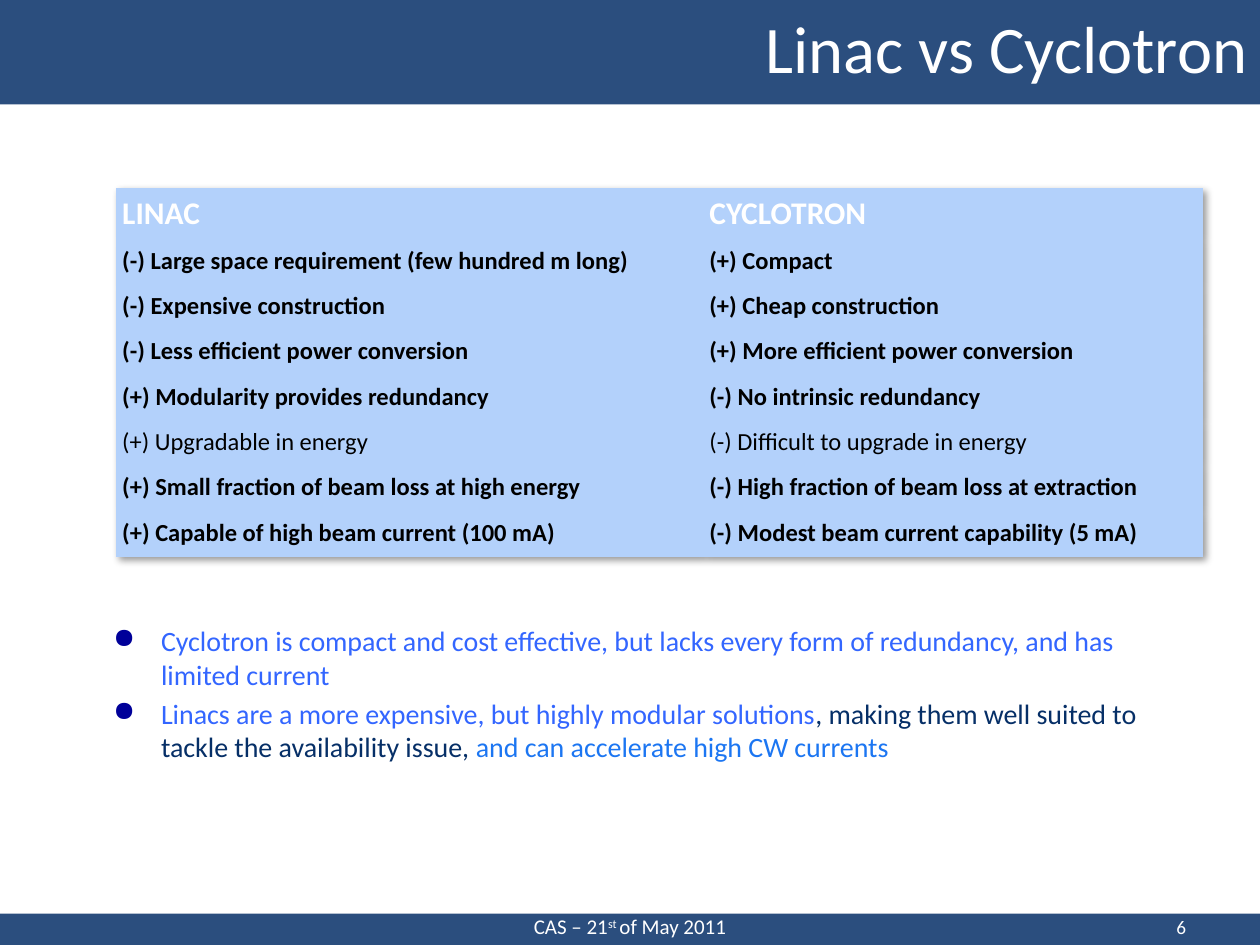
from pptx import Presentation
from pptx.util import Inches, Pt
from pptx.dml.color import RGBColor
from pptx.enum.shapes import MSO_SHAPE as Shape
from pptx.enum.text import PP_ALIGN as Align, MSO_ANCHOR as Anchor
from pptx.oxml import parse_xml
from pptx.oxml.ns import nsdecls


def color(code):
    return RGBColor.from_string(code)


def add_run(para, text, size, code, bold=False):
    run = para.add_run()
    run.text = text
    font = run.font
    font.name = "Calibri"
    font.size = Pt(size)
    font.bold = bold
    font.color.rgb = color(code)
    return run


prs = Presentation()
prs.slide_width, prs.slide_height = Inches(10), Inches(7.5)
slide = prs.slides.add_slide(prs.slide_layouts[6])

for top, height in [(0, 0.83), (7.25, 0.25)]:
    band = slide.shapes.add_shape(
        Shape.RECTANGLE, 0, Inches(top), Inches(10), Inches(height))
    band.shadow.inherit = False
    band.fill.solid()
    band.fill.fore_color.rgb = color("2B4E7E")
    band.line.fill.background()

labels = [
    (2, 7.26, 6, 0.24, Anchor.BOTTOM, Align.CENTER, 12,
     ["CAS – 21", "st ", "of May 2011"]),
    (0.83, 0, 9.17, 0.83, Anchor.MIDDLE, Align.RIGHT, 38, ["Linac vs Cyclotron"]),
    (8.75, 7.25, 1.25, 0.25, Anchor.BOTTOM, Align.CENTER, 11, ["6"]),
]
for left, top, width, height, anchor, align, size, parts in labels:
    box = slide.shapes.add_textbox(
        Inches(left), Inches(top), Inches(width), Inches(height))
    frame = box.text_frame
    frame.word_wrap = True
    frame.vertical_anchor = anchor
    para = frame.paragraphs[0]
    para.alignment = align
    if size == 38:
        para.line_spacing = 0.9
    for part in parts:
        run = add_run(para, part, size, "FFFFFF")
        if part == "st ":
            run.font._element.set("baseline", "30000")

points = [
    [("Cyclotron is compact and cost effective, but lacks every form of "
      "redundancy, and has limited current", "3366FF")],
    [("Linacs are a more expensive, but highly modular solutions", "3366FF"),
     (", making them well suited to tackle the availability issue, ", "062F67"),
     ("and can accelerate high CW currents", "1C76F2")],
]
box = slide.shapes.add_textbox(Inches(0.3), Inches(4.9), Inches(9), Inches(1.9))
frame = box.text_frame
frame.word_wrap = True
for i, point in enumerate(points):
    para = frame.add_paragraph() if i else frame.paragraphs[0]
    props = para._p.get_or_add_pPr()
    props.set("marL", str(Inches(0.88)))
    props.set("indent", str(Inches(-0.38)))
    props.append(parse_xml(
        f'<a:buClr {nsdecls("a")}><a:srgbClr val="000099"/></a:buClr>'))
    props.append(parse_xml(f'<a:buChar {nsdecls("a")} char="●"/>'))
    if i:
        para.space_before = Pt(3.2)
    for text, code in point:
        add_run(para, text, 16, code)

rows = [
    (0.4, "LINAC", "CYCLOTRON"),
    (0.37, "(-) Large space requirement (few hundred m long)", "(+) Compact"),
    (0.34, "(-) Expensive construction", "(+) Cheap construction"),
    (0.37, "(-) Less efficient power conversion", "(+) More efficient power conversion"),
    (0.37, "(+) Modularity provides redundancy", "(-) No intrinsic redundancy"),
    (0.34, "(+) Upgradable in energy", "(-) Difficult to upgrade in energy"),
    (0.37, "(+) Small fraction of beam loss at high energy",
     "(-) High fraction of beam loss at extraction"),
    (0.37, "(+) Capable of high beam current (100 mA)",
     "(-) Modest beam current capability (5 mA)"),
]
table = slide.shapes.add_table(
    len(rows), 2, Inches(0.92), Inches(1.49), Inches(8.63), Inches(2.93)).table
table.horz_banding = False
table._tbl.tblPr.insert(0, parse_xml(
    f'<a:effectLst {nsdecls("a")}><a:outerShdw blurRad="50800" dist="38100" '
    'dir="2700000" algn="tl" rotWithShape="0"><a:srgbClr val="000000">'
    '<a:alpha val="40000"/></a:srgbClr></a:outerShdw></a:effectLst>'))
table._tbl.tblPr.find(
    "{http://schemas.openxmlformats.org/drawingml/2006/main}tableStyleId"
).text = "{2D5ABB26-0587-4C30-8999-92F81FD0307C}"
for col, width in zip(table.columns, [4.66, 3.97]):
    col.width = Inches(width)
for i, (height, *texts) in enumerate(rows):
    table.rows[i].height = Inches(height)
    for j, text in enumerate(texts):
        cell = table.cell(i, j)
        cell.fill.solid()
        cell.fill.fore_color.rgb = color("B3D1FB")
        cell.vertical_anchor = Anchor.MIDDLE
        cell.margin_left = cell.margin_right = Inches(0.05)
        cell.margin_top = cell.margin_bottom = Inches(0.05)
        size, code = (14, "000000") if i else (18, "FFFFFF")
        add_run(cell.text_frame.paragraphs[0], text, size, code, i != 5)

prs.save("out.pptx")
